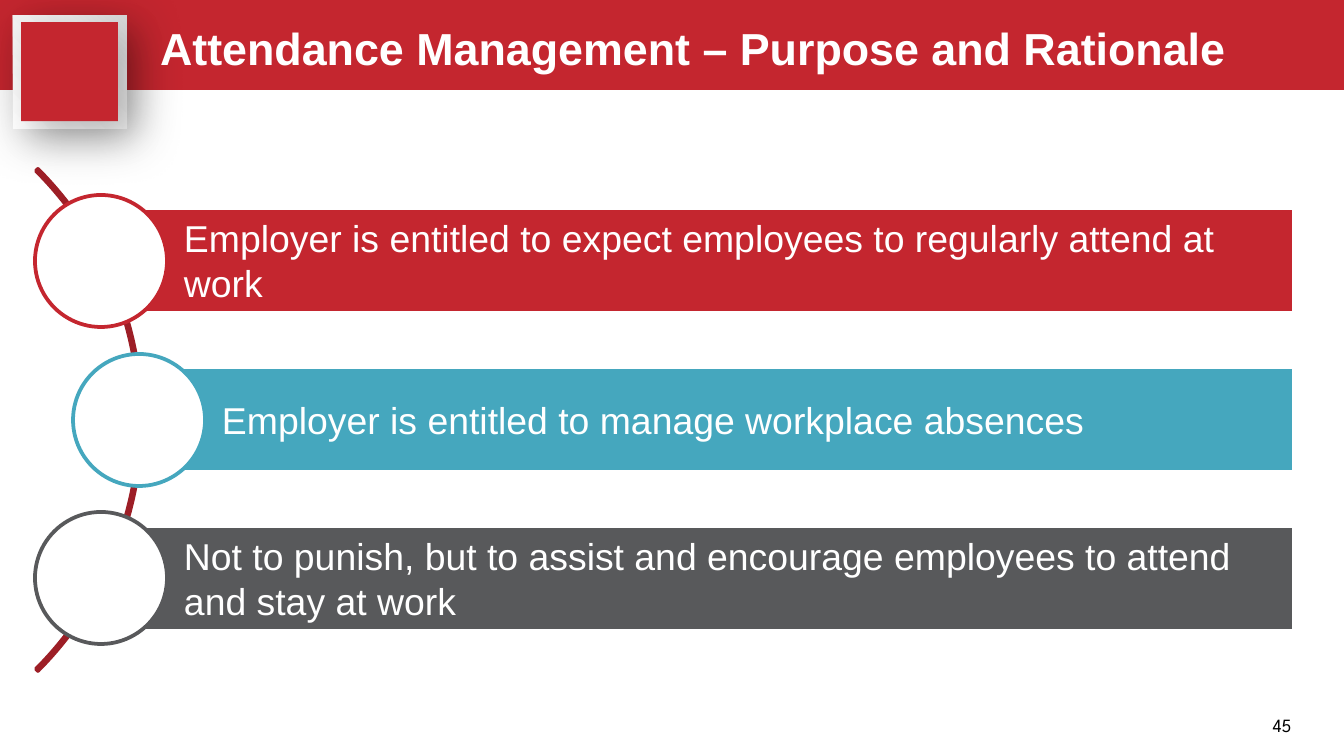
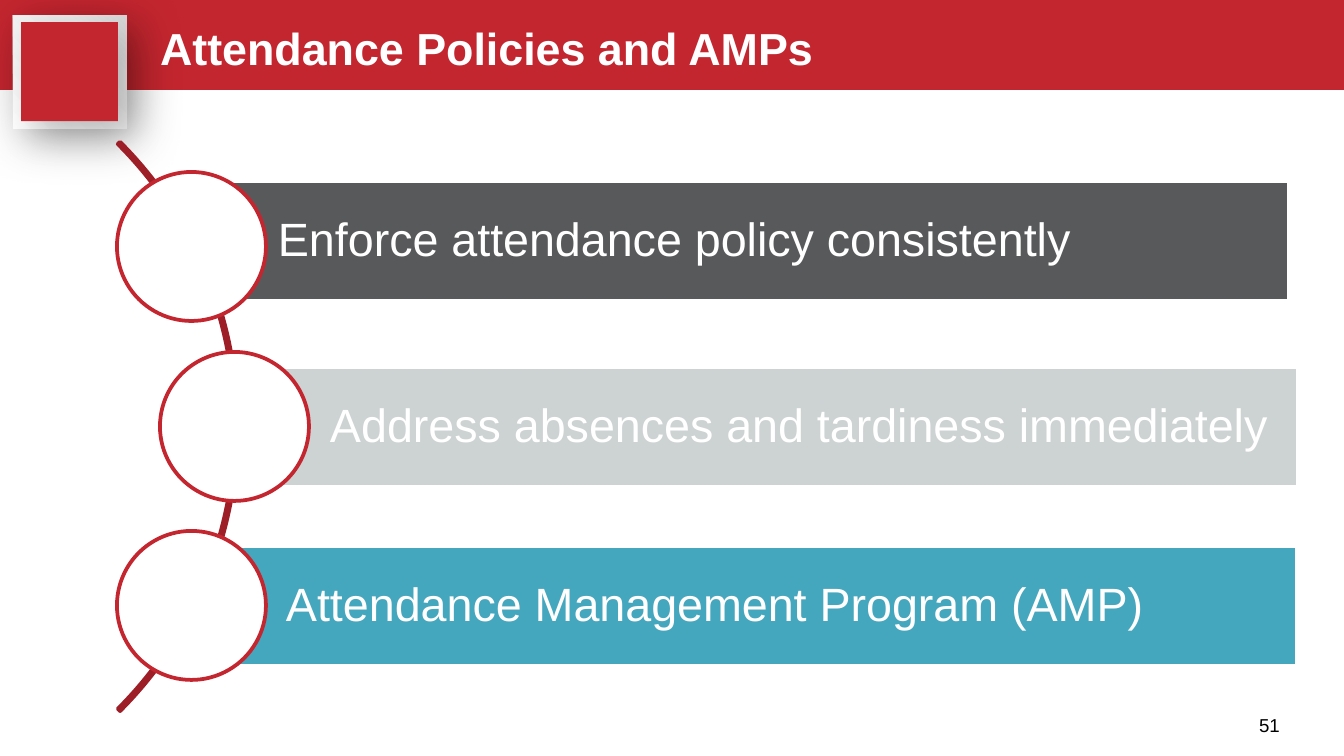
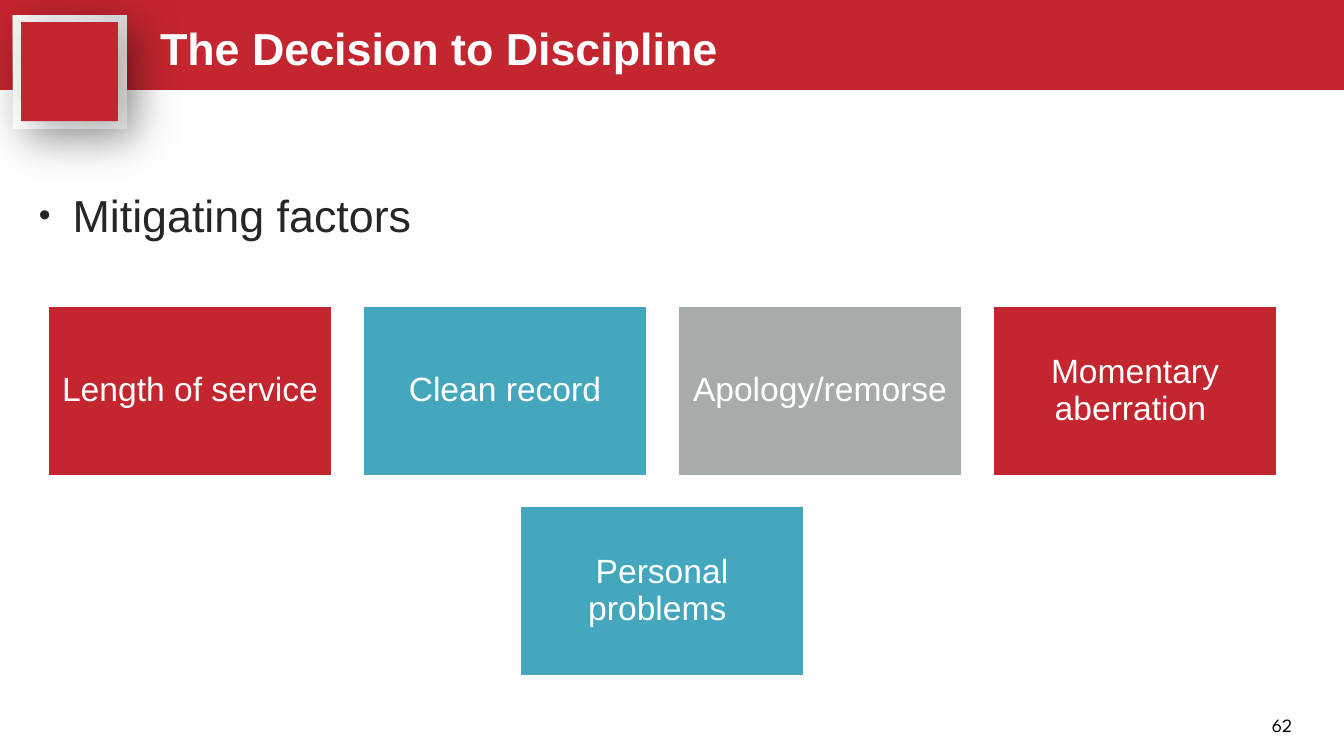
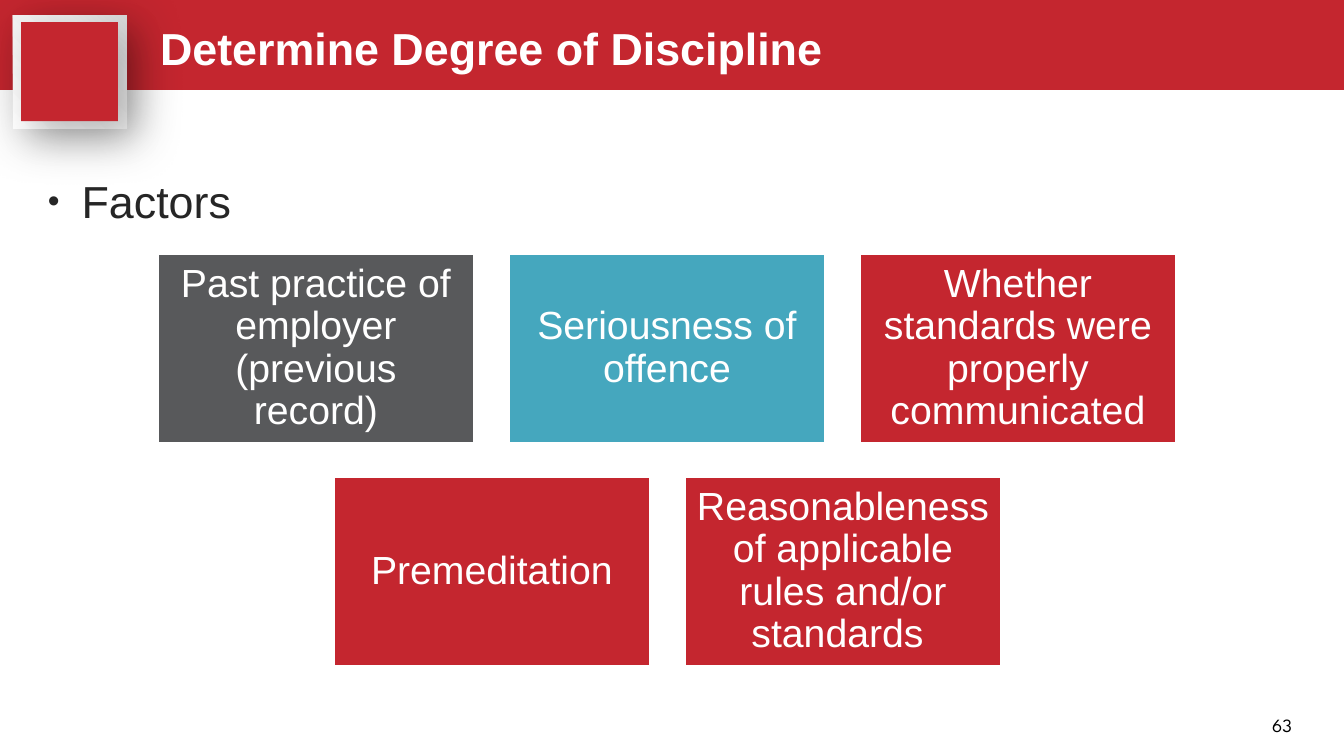
from copy import deepcopy
from lxml import etree
from pptx import Presentation
from pptx.dml.color import RGBColor
from pptx.enum.shapes import MSO_SHAPE
from pptx.enum.text import MSO_ANCHOR, MSO_AUTO_SIZE, PP_ALIGN
from pptx.oxml.ns import qn
from pptx.util import Emu, Pt

RECT, OVAL, ARC = MSO_SHAPE.RECTANGLE, MSO_SHAPE.OVAL, MSO_SHAPE.BLOCK_ARC
TOP, MIDDLE = MSO_ANCHOR.TOP, MSO_ANCHOR.MIDDLE
LEFT, CENTER = PP_ALIGN.LEFT, PP_ALIGN.CENTER
NO_FIT = MSO_AUTO_SIZE.NONE

RED = RGBColor(0xC4, 0x26, 0x2F)
DARK_RED = RGBColor(0x9D, 0x1E, 0x26)
TEAL = RGBColor(0x45, 0xA7, 0xBE)
CHARCOAL = RGBColor(0x58, 0x59, 0x5B)
GRAY = RGBColor(0xA6, 0xAC, 0xAC)
PALE_GRAY = RGBColor(0xCD, 0xD2, 0xD2)
FRAME_GRAY = RGBColor(0xEC, 0xEC, 0xEC)
FRAME_EDGE = RGBColor(0xD9, 0xD9, 0xD9)
INK = RGBColor(0x26, 0x26, 0x26)
BLACK = RGBColor(0, 0, 0)
WHITE = RGBColor(255, 255, 255)

PX = 914400 / 134.4
FONT = "Arial"
NUMBER_FONT = "League Spartan"


def draw(slide, kind, box, fill=None, line=None):
    shape = slide.shapes.add_shape(kind, *[Emu(round(v * PX)) for v in box])
    shape.shadow.inherit = False
    if fill is None:
        shape.fill.background()
    else:
        shape.fill.solid()
        shape.fill.fore_color.rgb = fill
    if line is None:
        shape.line.fill.background()
    else:
        shape.line.color.rgb = line
        shape.line.width = Pt(2)
    return shape


def write(shape, text, size, color, insets=(0, 0, 0, 0), anchor=MIDDLE,
          align=LEFT, spacing=1.0, font=FONT, bold=False):
    frame = shape.text_frame
    frame.text = text
    paragraph = frame.paragraphs[0]
    run = paragraph.runs[0]
    sides = ("margin_left", "margin_top", "margin_right", "margin_bottom")
    margins = {side: Emu(round(v * PX)) for side, v in zip(sides, insets)}
    formats = (
        (frame, {"word_wrap": True, "auto_size": NO_FIT,
                 "vertical_anchor": anchor, **margins}),
        (paragraph, {"alignment": align, "line_spacing": spacing,
                     "space_before": Pt(0)}),
        (run.font, {"name": font, "size": Pt(size), "bold": bold}),
        (run.font.color, {"rgb": color}),
    )
    for target, values in formats:
        for key, value in values.items():
            setattr(target, key, value)
    return paragraph


prs = Presentation()
prs.slide_width = Emu(round(1344 * PX))
prs.slide_height = Emu(round(756 * PX))
master = prs.slide_master
list_layout, title_layout = prs.slide_layouts[1], prs.slide_layouts[5]

headings = [
    (title_layout, "Attendance Management – Purpose and Rationale", "45", CENTER, NUMBER_FONT),
    (title_layout, "Attendance Policies and AMPs", "51", LEFT, FONT),
    (list_layout, "The Decision to Discipline", "62", CENTER, NUMBER_FONT),
    (list_layout, "Determine Degree of Discipline", "63", CENTER, NUMBER_FONT),
]
slides = [prs.slides.add_slide(heading[0]) for heading in headings]

band = draw(slides[0], RECT, (0, 0, 1344, 90), RED)
badge_frame = draw(slides[0], RECT, (13, 15, 114, 114), WHITE)
badge = draw(slides[0], RECT, (20, 23, 99, 97), RED)

badge_frame.fill.gradient()
badge_frame.fill.gradient_angle = 315
stop_list = badge_frame.element.spPr.find(qn("a:gradFill")).find(qn("a:gsLst"))
stop_list.append(deepcopy(stop_list[-1]))
frame_stops = [(0, WHITE), (0.73, FRAME_GRAY), (1, FRAME_EDGE)]
for stop, (position, color) in zip(badge_frame.fill.gradient_stops, frame_stops):
    stop.position = position
    stop.color.rgb = color

for part, opacity, blur, distance in ((badge_frame, 28, 28, 7), (badge, 25, 20, 9)):
    part.rotation = 270
    effects = part.element.spPr.find(qn("a:effectLst"))
    shadow = etree.SubElement(effects, qn("a:outerShdw"), blurRad=str(Pt(blur)),
                              dist=str(Pt(distance)), dir="2700000",
                              algn="tl", rotWithShape="0")
    shade = etree.SubElement(shadow, qn("a:srgbClr"), val="000000")
    etree.SubElement(shade, qn("a:alpha"), val=str(opacity * 1000))

for number, part in enumerate((band, badge_frame, badge), 20):
    part.element.nvSpPr.cNvPr.set("id", str(number))
    master.element.cSld.spTree.append(part.element)

for slide, (layout, heading, page, align, font) in zip(slides, headings):
    title = slide.shapes.title
    title.left, title.top, title.width, title.height = [
        Emu(round(v * PX)) for v in (160, 5, 1145, 79)]
    write(title, heading, 24, WHITE, spacing=1.1, bold=True)
    page_box = slide.shapes.add_textbox(
        *[Emu(round(v * PX)) for v in (1259, 708, 46, 34)])
    write(page_box, page, 10, BLACK, align=align, font=font)

arc_lists = [
    (slides[0], (-568, 65, 710, 710), 132, (83, 8, 8, 8), 20, 1.0, [
        ("Employer is entitled to expect employees to regularly attend at work",
         RED, RED, (101, 208, 1193, 105), (35, 195)),
        ("Employer is entitled to manage workplace absences",
         TEAL, TEAL, (139, 367, 1155, 105), (73, 354)),
        ("Not to punish, but to assist and encourage employees to attend and stay at work",
         CHARCOAL, CHARCOAL, (101, 526, 1193, 105), (35, 512)),
    ]),
    (slides[1], (-567, 24, 805, 805), 149, (95, 9, 9, 9), 25, 0.9, [
        ("Enforce attendance policy consistently",
         CHARCOAL, RED, (183, 181, 1106, 120), (117, 172)),
        ("Address absences and tardiness immediately",
         PALE_GRAY, RED, (235, 367, 1063, 120), (160, 352)),
        ("Attendance Management Program (AMP)",
         TEAL, RED, (191, 546, 1106, 120), (117, 531)),
    ]),
]
for slide, arc_box, ring_size, insets, size, spacing, points in arc_lists:
    arc = draw(slide, ARC, arc_box, line=DARK_RED)
    for index, value in enumerate((189, 27, 0.004)):
        arc.adjustments[index] = value
    for text, fill, ring_color, bar_box, ring_corner in points:
        bar = draw(slide, RECT, bar_box, fill, WHITE)
        write(bar, text, size, WHITE, insets, spacing=spacing)
        draw(slide, OVAL, (*ring_corner, ring_size, ring_size), WHITE, ring_color)

factor_grids = [
    (slides[2], "Mitigating factors", (19, 175, 1288, 492),
     (662, 305), (286, 172), (315, 200), 9, 18, [
        [("Length of service", RED), ("Clean record", TEAL),
         ("Apology/remorse", GRAY), ("Momentary aberration ", RED)],
        [("Personal problems ", TEAL)],
    ]),
    (slides[3], "Factors", (28, 161, 1157, 434),
     (667, 253), (318, 191), (351, 223), 12, 21, [
        [("Past practice of employer (previous record)", CHARCOAL),
         ("Seriousness of offence", TEAL),
         ("Whether standards were properly communicated", RED)],
        [("Premeditation", RED),
         ("Reasonableness of applicable rules and/or standards ", RED)],
    ]),
]
for slide, topic, body_box, (middle, top), (width, height), (step, drop), inset, size, rows in factor_grids:
    body = slide.placeholders[1]
    body.left, body.top, body.width, body.height = [
        Emu(round(v * PX)) for v in body_box]
    bullet = write(body, topic, 24, INK, (20, 13, 20, 13), TOP)
    properties = bullet._p.get_or_add_pPr()
    properties.set("marL", "228600")
    properties.set("indent", "-228600")
    etree.SubElement(properties, qn("a:buSzPct"), val="75000")
    etree.SubElement(properties, qn("a:buFont"), typeface=FONT)
    etree.SubElement(properties, qn("a:buChar"), char="•")
    for row_index, row in enumerate(rows):
        row_left = middle - ((len(row) - 1) * step + width) // 2
        for column, (text, fill) in enumerate(row):
            tile = draw(slide, RECT, (row_left + column * step, top + row_index * drop,
                                      width, height), fill, WHITE)
            write(tile, text, size, WHITE, (inset,) * 4, align=CENTER, spacing=0.9)

prs.save("out.pptx")
